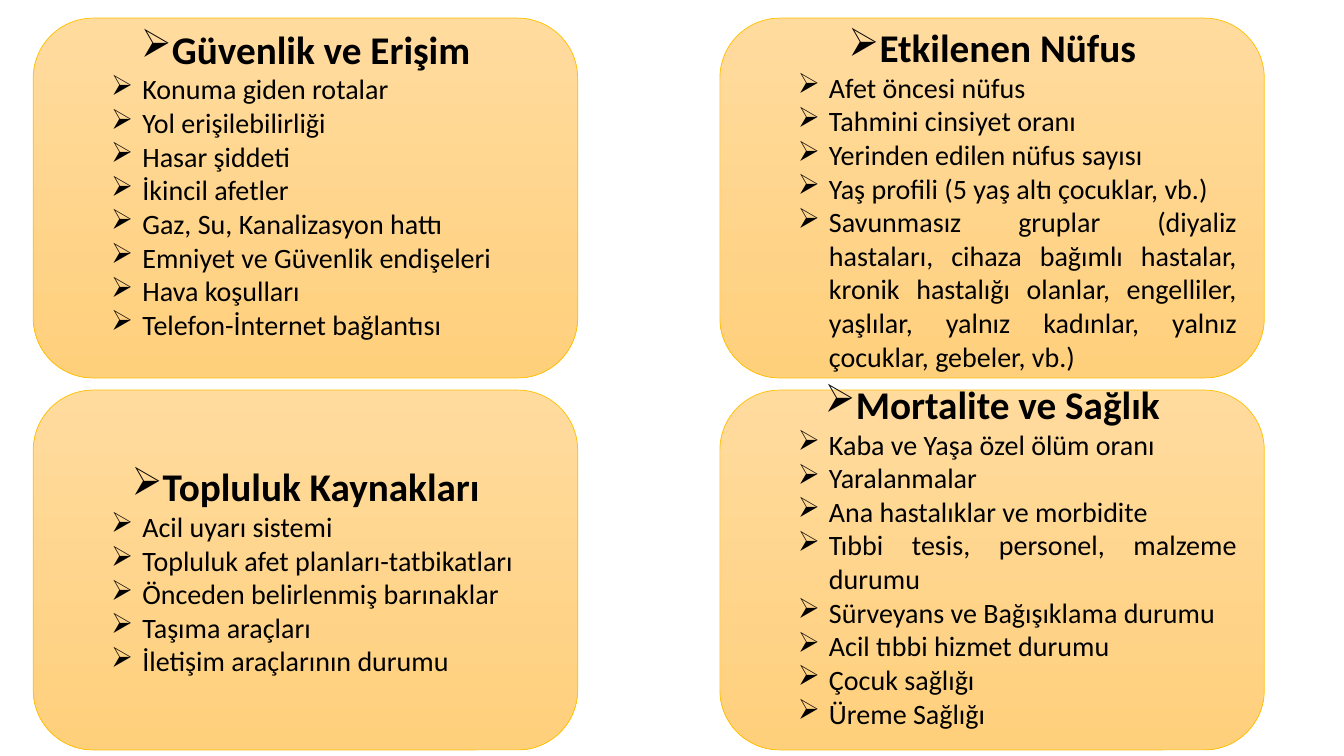
from dataclasses import dataclass

from lxml.etree import SubElement
from pptx import Presentation
from pptx.dml.color import RGBColor
from pptx.enum.shapes import MSO_SHAPE as Preset
from pptx.enum.text import MSO_ANCHOR as Anchor, PP_ALIGN as Align
from pptx.oxml.ns import qn
from pptx.util import Inches, Pt

BLACK = RGBColor(0x00, 0x00, 0x00)
GOLD = RGBColor(0xFF, 0xC0, 0x00)
LIGHT_ORANGE = RGBColor(0xFF, 0xDB, 0x9E)
DEEP_ORANGE = RGBColor(0xFF, 0xD0, 0x7C)

LEFT, TOP = 0.33, 0.18
WIDTH, HEIGHT = 5.4, 3.57
COLUMN_STEP, ROW_STEP = 6.81, 3.69
HANGING = 0.31


@dataclass
class Card:
    title: str
    items: list[str]
    bottom_inset: float = 0.05


CARDS = [
    Card("Güvenlik ve Erişim", [
        "Konuma giden rotalar",
        "Yol erişilebilirliği",
        "Hasar şiddeti",
        "İkincil afetler",
        "Gaz, Su, Kanalizasyon hattı",
        "Emniyet ve Güvenlik endişeleri",
        "Hava koşulları",
        "Telefon-İnternet bağlantısı",
    ], bottom_inset=0.35),
    Card("Etkilenen Nüfus", [
        "Afet öncesi nüfus",
        "Tahmini cinsiyet oranı",
        "Yerinden edilen nüfus sayısı",
        "Yaş profili (5 yaş altı çocuklar, vb.)",
        "Savunmasız gruplar (diyaliz hastaları, cihaza bağımlı hastalar, "
        "kronik hastalığı olanlar, engelliler, yaşlılar, yalnız kadınlar, "
        "yalnız çocuklar, gebeler, vb.)",
    ]),
    Card("Topluluk Kaynakları", [
        "Acil uyarı sistemi",
        "Topluluk afet planları-tatbikatları",
        "Önceden belirlenmiş barınaklar",
        "Taşıma araçları",
        "İletişim araçlarının durumu",
    ]),
    Card("Mortalite ve Sağlık", [
        "Kaba ve Yaşa özel ölüm oranı",
        "Yaralanmalar",
        "Ana hastalıklar ve morbidite",
        "Tıbbi tesis, personel, malzeme durumu",
        "Sürveyans ve Bağışıklama durumu",
        "Acil tıbbi hizmet durumu",
        "Çocuk sağlığı",
        "Üreme Sağlığı",
    ], bottom_inset=0.35),
]


def add_bullet(para, margin: float) -> None:
    properties = para._p.get_or_add_pPr()
    properties.set("marL", str(Inches(margin)))
    properties.set("indent", str(-Inches(HANGING)))
    SubElement(properties, qn("a:buChar")).set("char", "➢")


def style_paragraph(para, is_title: bool) -> None:
    para.alignment = Align.CENTER if is_title else Align.JUSTIFY
    para.level = 0 if is_title else 1
    add_bullet(para, HANGING if is_title else 0.81)
    for span in para.runs:
        span.font.name = "Calibri"
        span.font.size = Pt(28 if is_title else 20)
        span.font.bold = is_title
        span.font.color.rgb = BLACK


def draw_card(page, card: Card, left: float, top: float) -> None:
    box = page.shapes.add_shape(
        Preset.ROUNDED_RECTANGLE,
        Inches(left), Inches(top), Inches(WIDTH), Inches(HEIGHT),
    )
    box.shadow.inherit = False
    box.fill.gradient()
    box.fill.gradient_angle = 270
    for stop, color in zip(box.fill.gradient_stops, (LIGHT_ORANGE, DEEP_ORANGE)):
        stop.color.rgb = color
    box.line.color.rgb = GOLD
    box.line.width = Pt(0.5)
    frame = box.text_frame
    frame.word_wrap = True
    frame.vertical_anchor = Anchor.MIDDLE
    frame.margin_bottom = Inches(card.bottom_inset)
    frame.text = "\n".join([card.title, *card.items])
    for index, para in enumerate(frame.paragraphs):
        style_paragraph(para, is_title=index == 0)


def main() -> None:
    deck = Presentation()
    deck.slide_width, deck.slide_height = Inches(13.33), Inches(7.5)
    page = deck.slides.add_slide(deck.slide_layouts[6])
    for index, card in enumerate(CARDS):
        row, column = divmod(index, 2)
        draw_card(page, card, LEFT + column * COLUMN_STEP, TOP + row * ROW_STEP)
    deck.save("out.pptx")


if __name__ == "__main__":
    main()
